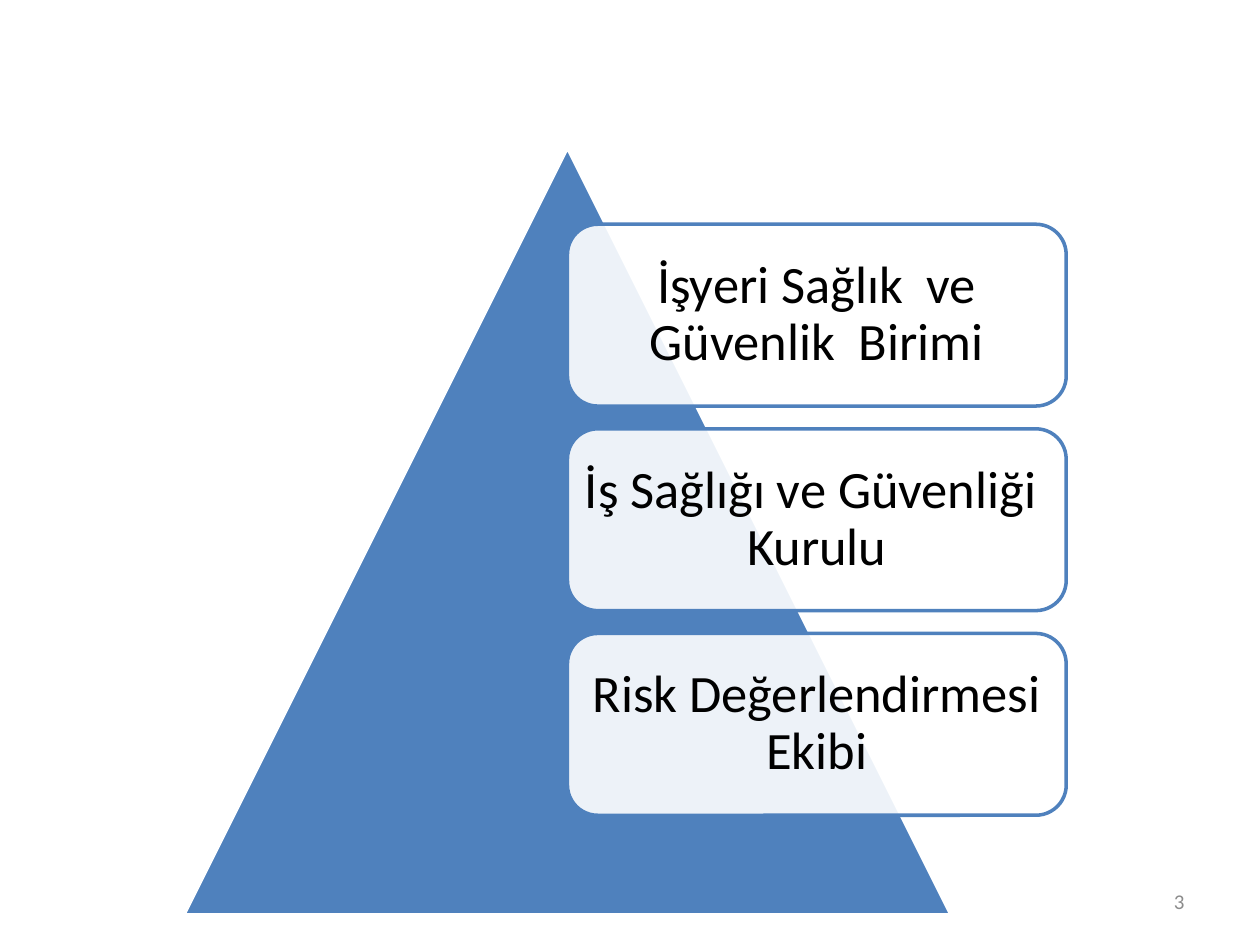
from dataclasses import dataclass
from lxml.etree import SubElement
from pptx import Presentation
from pptx.dml.color import RGBColor
from pptx.enum.shapes import MSO_SHAPE as Shape
from pptx.enum.text import MSO_ANCHOR as Anchor, PP_ALIGN as Align
from pptx.oxml.ns import qn
from pptx.util import Pt


@dataclass(frozen=True)
class Theme:
    font: str = "Calibri"
    blue: RGBColor = RGBColor(0x4F, 0x81, 0xBD)
    white: RGBColor = RGBColor(0xFF, 0xFF, 0xFF)
    black: RGBColor = RGBColor(0, 0, 0)
    gray: RGBColor = RGBColor(0x8C, 0x8C, 0x8C)
    card_size: float = 30
    number_size: float = 12
    line_width: float = 2
    card_opacity: int = 90


@dataclass(frozen=True)
class Box:
    left: float
    top: float
    width: float
    height: float

    def lengths(self):
        return [Pt(value) for value in (self.left, self.top, self.width, self.height)]


THEME = Theme()
UNITS = [
    "İşyeri Sağlık  ve Güvenlik  Birimi",
    "İş Sağlığı ve Güvenliği  Kurulu",
    "Risk Değerlendirmesi Ekibi",
]


def add_panel(page, kind, box, fill, line):
    panel = page.shapes.add_shape(kind, *box.lengths())
    panel.shadow.inherit = False
    panel.fill.solid()
    panel.fill.fore_color.rgb = fill
    panel.line.color.rgb = line
    panel.line.width = Pt(THEME.line_width)
    return panel


def set_opacity(panel, percent):
    color = panel.fill._xPr.find(qn("a:solidFill"))[0]
    SubElement(color, qn("a:alpha")).set("val", str(percent * 1000))


def write_text(shape, text, size, color, align):
    frame = shape.text_frame
    frame.word_wrap = True
    frame.vertical_anchor = Anchor.MIDDLE
    para = frame.paragraphs[0]
    para.alignment = align
    span = para.add_run()
    span.text = text
    span.font.name = THEME.font
    span.font.size = Pt(size)
    span.font.color.rgb = color
    return frame


def add_card(page, box, text):
    card = add_panel(page, Shape.ROUNDED_RECTANGLE, box, THEME.white, THEME.blue)
    set_opacity(card, THEME.card_opacity)
    frame = write_text(card, text, THEME.card_size, THEME.black, Align.CENTER)
    frame.margin_left = frame.margin_right = Pt(3.6)
    frame.margin_top = frame.margin_bottom = Pt(3.6)
    frame.paragraphs[0].line_spacing = 0.9


def add_pyramid(page, box, units):
    add_panel(page, Shape.ISOSCELES_TRIANGLE, box, THEME.blue, THEME.white)
    width = box.width * 0.65
    height = box.height * 0.237
    pitch = height * 1.125
    for index, unit in enumerate(units):
        top = box.top + box.height * 0.1 + index * pitch
        add_card(page, Box(box.left + box.width / 2, top, width, height), unit)


def add_page_number(page, box, number):
    label = page.shapes.add_textbox(*box.lengths())
    write_text(label, number, THEME.number_size, THEME.gray, Align.RIGHT)


def main():
    deck = Presentation()
    deck.slide_width, deck.slide_height = Pt(720), Pt(540)
    page = deck.slides.add_slide(deck.slide_layouts[6])
    add_page_number(page, Box(516, 500.5, 168, 28.75), "3")
    add_pyramid(page, Box(105, 84.3, 438.5, 438.5), UNITS)
    deck.save("out.pptx")


if __name__ == "__main__":
    main()
